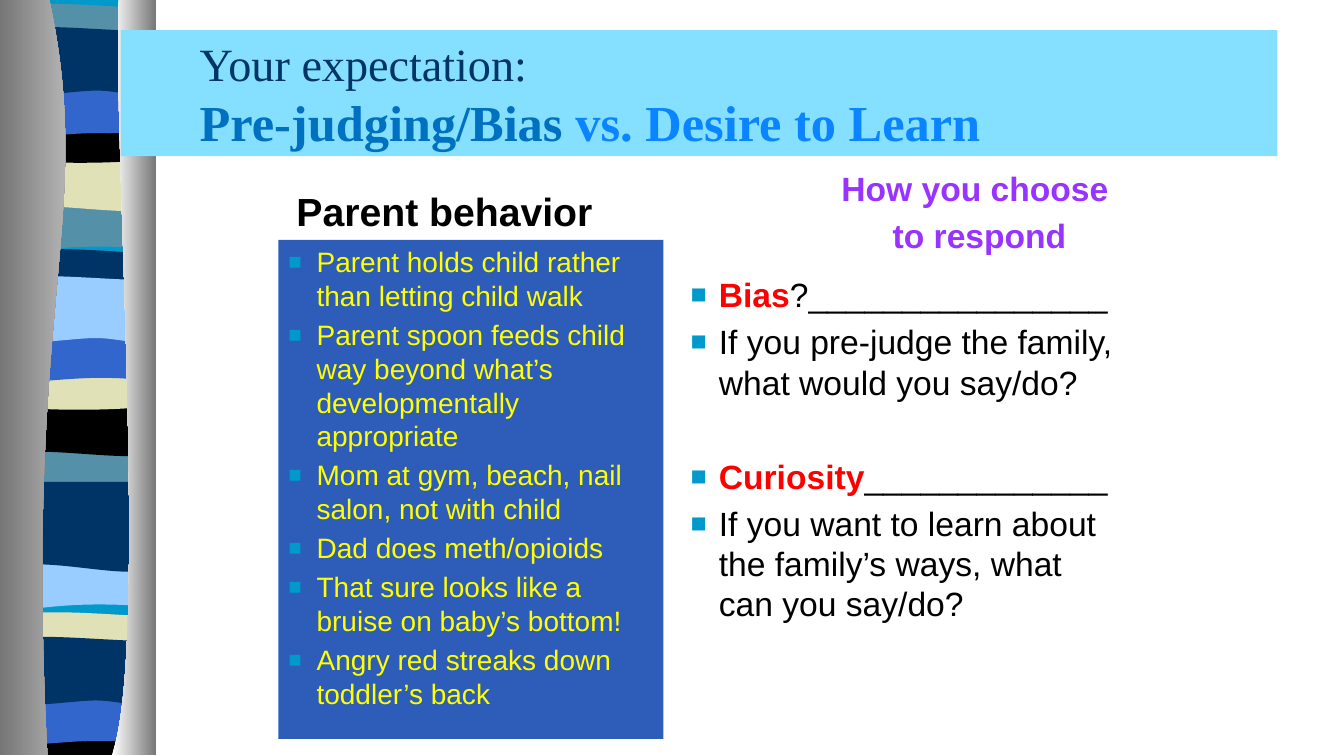
import pptx
import pptx.util
import pptx.dml.color
import pptx.enum.text
import lxml.etree

THEME = {
    "navy": "003366", "teal": "5490A8", "sand": "E1E1B7", "black": "000000",
    "blue": "3366CC", "sky": "99CCFF", "cyan": "0099CC",
    "post dark": "767676", "post grey": "D0D0D0", "post light": "FFFFFF",
    "title fill": "85E0FF", "bias": "0070C0", "learn": "0A85FF",
    "panel": "2D5CB9", "yellow": "FFFF00", "purple": "9933FF", "red": "FF0000",
    "serif": "Times New Roman", "sans": "Arial",
    "title small": 33, "title large": 36, "heading": 28, "text": 24, "list": 20,
    "line": 1.2, "gap": 0.2,
}
COLOR = {name: pptx.dml.color.RGBColor.from_string(value)
         for name, value in THEME.items()
         if isinstance(value, str) and len(value) == 6}

presentation = pptx.Presentation()
presentation.slide_width = pptx.util.Inches(13.33)
presentation.slide_height = pptx.util.Inches(7.5)
slide = presentation.slides.add_slide(presentation.slide_layouts[4])
cell = presentation.slide_height / 75  # the grid has 75 rows of square cells


def draw_outline(left, top, stretch, steps):
    """Draw a closed outline; a step of three points is a Bezier curve."""
    points = [((left + x) * cell, (top + y * stretch) * cell)
              for step in steps for x, y in step]
    builder = ribbon.shapes.build_freeform(*points[0], scale=1.0)
    builder.add_line_segments(points[1:], close=True)
    shape = builder.convert_to_shape()
    shape.shadow.inherit = False
    shape.line.fill.background()
    lines = iter(shape.element.xpath(".//a:lnTo"))
    for step in steps[1:]:
        segments = [next(lines) for _ in step]
        if len(step) == 3:
            segments[0].tag = segments[0].tag.replace("lnTo", "cubicBezTo")
            for segment in segments[1:]:
                segments[0].append(segment[0])
                segment.getparent().remove(segment)
    return shape


def write(placeholder, box, paragraphs, size, bulleted=False, anchor="TOP", align="LEFT"):
    """Place a body placeholder and fill it with paragraphs of (text, color, bold) runs."""
    placeholder.left, placeholder.top, placeholder.width, placeholder.height = (
        int(length * cell) for length in box)
    frame = placeholder.text_frame
    frame.word_wrap = True
    frame.auto_size = pptx.enum.text.MSO_AUTO_SIZE.NONE
    frame.vertical_anchor = pptx.enum.text.MSO_ANCHOR[anchor]
    for index, runs in enumerate(paragraphs):
        paragraph = frame.paragraphs[0] if index == 0 else frame.add_paragraph()
        if bulleted:
            properties = paragraph._p.get_or_add_pPr()
            indent = int(2.8 * cell)
            properties.set("marL", str(indent))
            properties.set("indent", str(-indent))
            namespace = properties.nsmap["a"]
            bullet_color = lxml.etree.SubElement(properties, f"{{{namespace}}}buClr")
            lxml.etree.SubElement(bullet_color, f"{{{namespace}}}srgbClr", val=THEME["cyan"])
            lxml.etree.SubElement(properties, f"{{{namespace}}}buSzPct", val="80000")
            lxml.etree.SubElement(properties, f"{{{namespace}}}buFont", typeface=THEME["sans"])
            lxml.etree.SubElement(properties, f"{{{namespace}}}buChar", char="■")
        paragraph.alignment = pptx.enum.text.PP_ALIGN[align]
        paragraph.line_spacing = pptx.util.Pt(THEME["line"] * size)
        paragraph.space_before = pptx.util.Pt(THEME["gap"] * size if index else 0)
        paragraph.font.name = THEME["sans"]
        paragraph.font.size = pptx.util.Pt(size)
        same_look = len({run[1:] for run in runs}) == 1
        for text, color, bold in runs:
            run = paragraph.add_run()
            run.text = text
            font = paragraph.font if same_look else run.font
            font.color.rgb = COLOR[color]
            font.bold = bold
    return frame


# Ribbon of wavy bands, behind the placeholders
ribbon = slide.shapes.add_group_shape()
ribbon.element.getparent().insert(2, ribbon.element)
W = 14.5
BANDS = {
    "base": [[(W, 0)], [(W, 74.7)], [(0, 74.7)], [(0, 0)]],
    "tail": [[(W, 0)], [(W, 4.7)], [(4.5, 3.9), (2.4, 5.5), (0, 4.7)], [(0, 0)]],
    "crest": [[(W, 0)], [(W, 4.7)], [(12.1, 5.5), (4.5, 4.1), (0, 4.7)], [(0, 0)]],
    "strip": [[(W, 0)], [(W, 2.4)], [(12.1, 2.9), (2.4, 2.9), (0, 2.4)], [(0, 0)],
              [(1, -0.5), (3.2, -0.4), (5.6, -0.4)], [(8, -0.4), (12.6, -0.1), (W, 0)]],
    "lens": [[(W, 0)], [(W, 3.2)], [(12.1, 3.8), (2.4, 3.8), (0, 3.2)], [(0, 0)],
             [(8.9, 0.5), (11.5, 0), (W, 0)]],
    "arch": [[(W, 0)], [(W, 4.7)], [(12.3, 4.2), (11.3, 4.2), (8.9, 4.2)],
             [(6.5, 4.2), (2.3, 4.7), (0, 4.7)], [(0, 0)]],
    "belt": [[(W, 0)], [(W, 3.1)], [(13.5, 3.6), (11.3, 3.1), (8.9, 3.1)],
             [(6.5, 3.1), (1.5, 3.6), (0, 3.1)], [(0, 0)],
             [(2.1, -0.5), (9.8, 0), (W, 0)]],
    "foot": [[(W, 0)], [(W, 3.7)], [(0, 3.7)], [(0, 0)], [(8.9, 0.5), (11.4, 0), (W, 0)]],
}
for band, left, top, stretch, color in [
    ("base", 0.7, 0, 1, "cyan"),
    ("tail", 0.7, 20, 1, "teal"), ("crest", 0.7, 15, 1.2, "sand"),
    ("strip", 0.7, 0.9, 1.2, "teal"), ("lens", 0.7, 12.5, 1, "black"),
    ("arch", 0.7, 9, 1, "blue"), ("belt", 0.7, 3.1, 1.9, "navy"),
    ("tail", 0.6, 44, 0.9, "teal"), ("crest", 0.6, 39.8, 1.1, "black"),
    ("strip", 0.6, 25.2, 1.2, "navy"), ("lens", 0.6, 37, 1, "sand"),
    ("arch", 0.6, 33.3, 1, "blue"), ("belt", 0.6, 27.8, 1.85, "sky"),
    ("tail", 0.7, 55.5, 1, "sky"), ("crest", 0.7, 47.8, 1.8, "navy"),
    ("strip", 0.6, 61.2, 1.1, "sand"), ("foot", 0.6, 71.2, 1, "black"),
    ("arch", 0.6, 69.3, 1, "blue"), ("belt", 0.6, 63.6, 1.9, "navy"),
]:
    shape = draw_outline(left, top, stretch, BANDS[band])
    shape.fill.solid()
    shape.fill.fore_color.rgb = COLOR[color]

# Shaded posts on both sides of the ribbon
for outline, shades in [
    ([[(4.9, 0)], [(9.5, 21.6), (2.3, 29.6), (4.7, 74.9)], [(0, 74.9)], [(0, 0)]],
     ("post dark", "post grey")),
    ([[(11.8, 0)], [(11.1, 12.5), (14.9, 64.6), (11.1, 74.9)], [(15.5, 74.9)], [(15.5, 0)]],
     ("post light", "post dark")),
]:
    post = draw_outline(0, 0, 1, outline)
    post.fill.gradient()
    post.fill.gradient_angle = 0
    for stop, shade in zip(post.fill.gradient_stops, shades):
        stop.color.rgb = COLOR[shade]

# Title
title = slide.shapes.title
title.left, title.top, title.width, title.height = (
    int(length * cell) for length in (12, 3, 114.7, 12.5))
title.fill.solid()
title.fill.fore_color.rgb = COLOR["title fill"]
title.text_frame.word_wrap = True
title.text_frame.auto_size = pptx.enum.text.MSO_AUTO_SIZE.NONE
title.text_frame.vertical_anchor = pptx.enum.text.MSO_ANCHOR.MIDDLE
title.text_frame.margin_left = int(7.8 * cell)
paragraph = title.text_frame.paragraphs[0]
paragraph.alignment = pptx.enum.text.PP_ALIGN.LEFT
paragraph.font.name = THEME["serif"]
for text, size, color, bold in [
    ("Your expectation:", "title small", "navy", False),
    ("Pre-judging/Bias ", "title large", "bias", True),
    ("vs. Desire to Learn", "title large", "learn", True),
]:
    run = paragraph.add_run()
    run.text = text
    run.font.size = pptx.util.Pt(THEME[size])
    run.font.color.rgb = COLOR[color]
    run.font.bold = bold
    if size == "title small":
        paragraph.add_line_break()

# Left column: parent behavior
left_heading, left_list, right_heading, right_list = list(slide.placeholders)[1:]
frame = write(left_heading, (27, 16.8, 38.9, 7), [[("Parent behavior", "black", True)]],
              THEME["heading"], anchor="BOTTOM")
frame.margin_left = int(2.4 * cell)
behaviors = [
    "Parent holds child rather than letting child walk",
    "Parent spoon feeds child way beyond what’s developmentally appropriate",
    "Mom at gym, beach, nail salon, not with child",
    "Dad does meth/opioids",
    "That sure looks like a bruise on baby’s bottom!",
    "Angry red streaks down toddler’s back",
]
write(left_list, (27.6, 23.8, 38.2, 49.5),
      [[(behavior, "yellow", False)] for behavior in behaviors], THEME["list"], bulleted=True)
left_list.fill.solid()
left_list.fill.fore_color.rgb = COLOR["panel"]

# Right column: responses
write(right_heading, (67.7, 16.8, 58.9, 9),
      [[("How you choose ", "purple", True)], [("to respond", "purple", True)]],
      THEME["text"], anchor="BOTTOM", align="CENTER")
frame = write(right_list, (67.5, 26.7, 44.2, 44.2), [
    [("Bias", "red", True), ("?________________", "black", False)],
    [("If you pre-judge the family, what would you say/do?", "black", False)],
    [("Curiosity", "red", True), ("_____________", "black", False)],
    [("If you want to learn about the family’s ways, what can you say/do?", "black", False)],
], THEME["text"], bulleted=True)
frame.paragraphs[2].space_before = pptx.util.Pt(
    (THEME["line"] + 2 * THEME["gap"]) * THEME["text"])

presentation.save("out.pptx")
